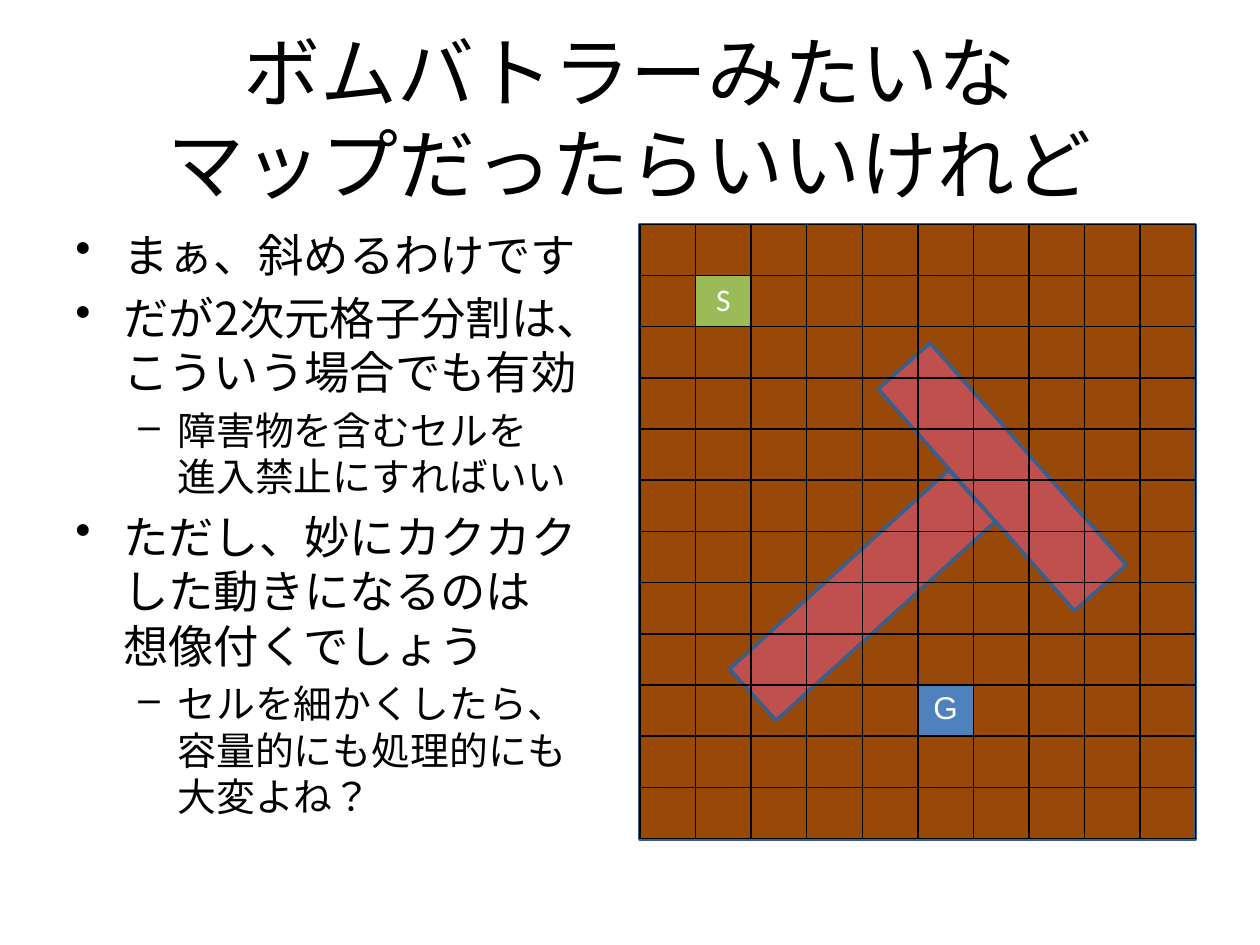
"""Build a slide on grid maps with slanted walls."""
from lxml.etree import SubElement
from pptx import Presentation
from pptx.dml.color import RGBColor
from pptx.enum.shapes import MSO_SHAPE as Kind
from pptx.enum.text import MSO_ANCHOR as Anchor, PP_ALIGN as Align
from pptx.oxml import parse_xml
from pptx.oxml.ns import nsdecls, qn
from pptx.util import Inches, Pt

FONT = "Noto Sans CJK JP"
TITLE = "ボムバトラーみたいな\nマップだったらいいけれど"
BODY = [
    (0, "まぁ、斜めるわけです"),
    (0, "だが2次元格子分割は、こういう場合でも有効"),
    (1, "障害物を含むセルを\n進入禁止にすればいい"),
    (0, "ただし、妙にカクカクした動きになるのは\n想像付くでしょう"),
    (1, "セルを細かくしたら、\n容量的にも処理的にも\n大変よね？"),
]
LEVELS = [("•", 25.9, 0.38, 0.38), ("–", 22.2, 0.81, 0.31)]
ROWS, COLS = 12, 10
MAP = (5.08, 1.78, 4.41, 4.88)
WALLS = [((5.67, 4.45, 2.35, 0.55), 317.8), ((6.78, 3.51, 2.35, 0.55), 48.5)]
MARKS = {(1, 1): ("S", "Calibri", "9BBB59"), (9, 5): ("G", "Arial", "4F81BD")}


def color(code):
    return RGBColor.from_string(code)


def place(box):
    return [Inches(v) for v in box]


def style(para, size, name, code):
    font = para.font
    font.size, font.name = Pt(size), name
    font.color.rgb = color(code)


def write(para, text, size):
    para.text = text
    style(para, size, FONT, "000000")
    para.line_spacing = Pt(round(size * 1.2, 1))
    props = para._p.get_or_add_pPr()
    props.set("hangingPunct", "0")
    base = props.find(qn("a:defRPr"))
    base.set("lang", "ja-JP")
    SubElement(base, qn("a:ea"), typeface=FONT)


def add_text(slide, box):
    frame = slide.shapes.add_textbox(*place(box)).text_frame
    frame.word_wrap = True
    return frame


def add_bullet(para, level, text):
    mark, size, left, hang = LEVELS[level]
    para.level = level
    write(para, text, size)
    para.space_before = Pt(round(size * 0.2, 1))
    props = para._p.get_or_add_pPr()
    props.set("marL", str(Inches(left)))
    props.set("indent", str(-Inches(hang)))
    bullet = parse_xml(f'<a:buChar {nsdecls("a")} char="{mark}"/>')
    props.find(qn("a:defRPr")).addprevious(bullet)


def add_rect(slide, box, fill, turn=0):
    rect = slide.shapes.add_shape(Kind.RECTANGLE, *place(box))
    rect.shadow.inherit = False
    rect.rotation = turn
    rect.fill.solid()
    rect.fill.fore_color.rgb = color(fill)
    rect.line.color.rgb = color("3A5F8C")
    rect.line.width = Pt(2)


def add_edges(cell):
    props = cell._tc.get_or_add_tcPr()
    for spot, side in enumerate("LRTB"):
        props.insert(spot, parse_xml(
            f'<a:ln{side} {nsdecls("a")} w="{Pt(1)}"><a:solidFill>'
            f'<a:srgbClr val="000000"/></a:solidFill></a:ln{side}>'))


def add_grid(slide):
    table = slide.shapes.add_table(ROWS, COLS, *place(MAP)).table
    table.first_row = table.horz_banding = False
    for col in table.columns:
        col.width = Inches(MAP[2] / COLS)
    for row in table.rows:
        row.height = Inches(MAP[3] / ROWS)
    for cell in table.iter_cells():
        cell.fill.background()
        add_edges(cell)
    for spot, (text, name, fill) in MARKS.items():
        cell = table.cell(*spot)
        cell.fill.solid()
        cell.fill.fore_color.rgb = color(fill)
        para = cell.text_frame.paragraphs[0]
        para.text, para.alignment = text, Align.CENTER
        style(para, 18, name, "FFFFFF")


def main():
    deck = Presentation()
    deck.slide_width, deck.slide_height = Inches(10), Inches(7.5)
    slide = deck.slides.add_slide(deck.slide_layouts[6])

    head = add_text(slide, (0.5, 0.3, 9, 1.25))
    head.vertical_anchor = Anchor.MIDDLE
    write(head.paragraphs[0], TITLE, 44)
    head.paragraphs[0].alignment = Align.CENTER

    body = add_text(slide, (0.5, 1.75, 4.42, 4.95))
    for spot, (level, text) in enumerate(BODY):
        para = body.add_paragraph() if spot else body.paragraphs[0]
        add_bullet(para, level, text)

    add_rect(slide, MAP, "984807")
    for box, turn in WALLS:
        add_rect(slide, box, "C0504D", turn)
    add_grid(slide)
    deck.save("out.pptx")


if __name__ == "__main__":
    main()
